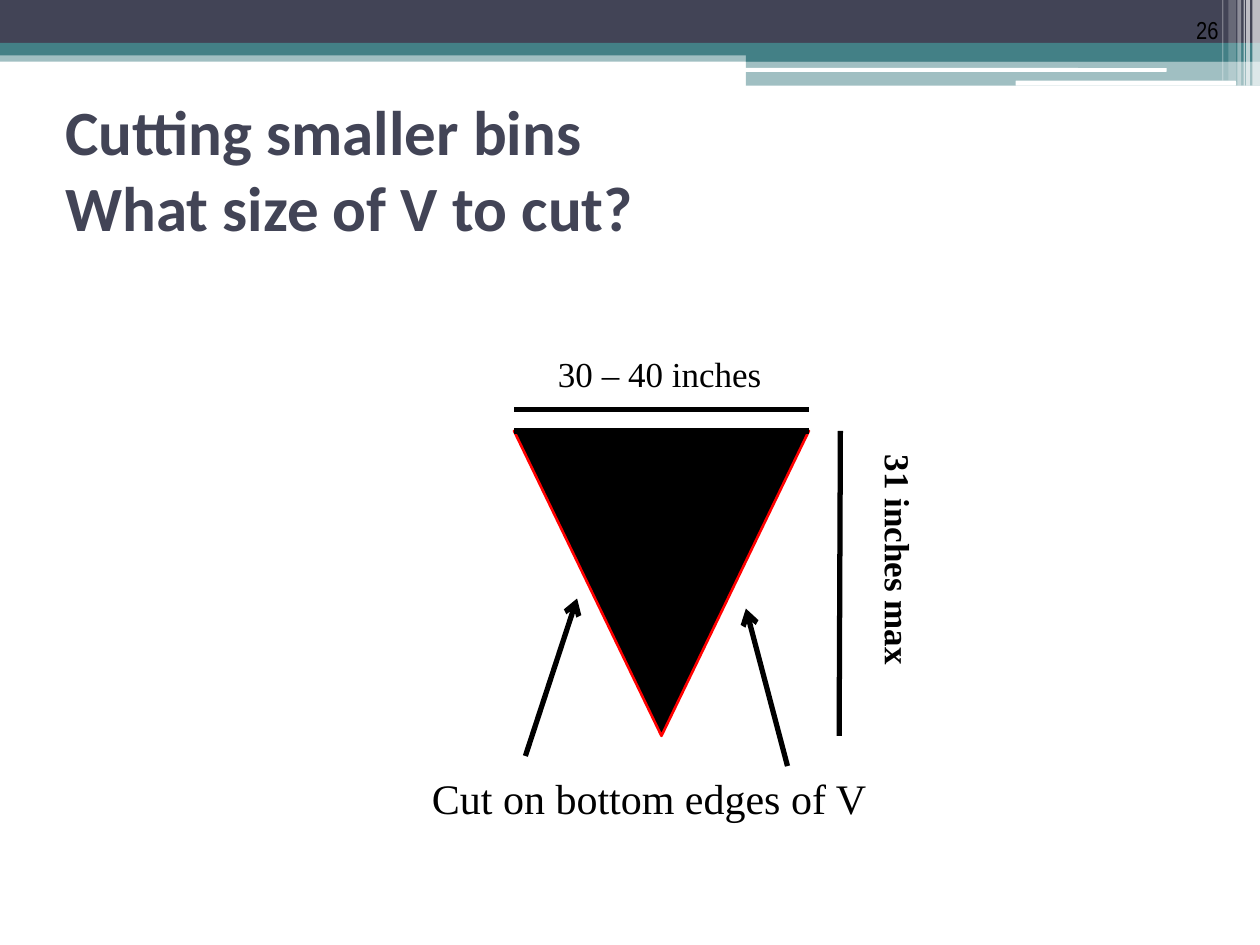
import pptx
import pptx.dml.color
import pptx.enum.shapes
import pptx.enum.text
import pptx.oxml.ns
import pptx.util
from lxml import etree

Inches = pptx.util.Inches
SHAPE = pptx.enum.shapes.MSO_SHAPE
ALIGN = pptx.enum.text.PP_ALIGN
ANCHOR = pptx.enum.text.MSO_ANCHOR
qn = pptx.oxml.ns.qn

COLORS = {
    "slate": "424456",
    "teal": "438086",
    "white": "FFFFFF",
    "black": "000000",
    "red": "FF0000",
}

TITLE = {"name": "Calibri", "size": pptx.util.Pt(36), "bold": True}
NUMBER = {"name": "Arial Narrow", "size": pptx.util.Pt(14)}
LABEL = {"name": "Times New Roman", "size": pptx.util.Pt(20)}
BOLD_LABEL = {**LABEL, "bold": True}
CAPTION = {**LABEL, "size": pptx.util.Pt(24)}

# Header bands: left, top, width, height, colour, opacity in percent
BANDS = [
    (0, 0.4, 10, 0.09, "teal", 50),
    (0, 0, 10, 0.34, "slate", 100),
    (0, 0.34, 10, 0.1, "teal", 100),
    (5.92, 0.39, 4.08, 0.1, "teal", 100),
    (5.92, 0.48, 4.08, 0.2, "teal", 50),
]
# White rounded strips: left, top, width, height
STRIPS = [(5.91, 0.54, 3.35, 0.03), (8.06, 0.64, 1.75, 0.04)]
# Pale stripes in the corner: left, width, height, opacity in percent
STRIPES = [
    (9.94, 0.06, 0.68, 65),
    (9.89, 0.03, 0.68, 65),
    (9.87, 0.01, 0.68, 60),
    (9.82, 0.03, 0.68, 40),
    (9.75, 0.06, 0.64, 20),
    (9.7, 0.01, 0.64, 30),
]


def rgb(color):
    return pptx.dml.color.RGBColor.from_string(COLORS[color])


def add_block(slide, kind, box, color, opacity=100):
    block = slide.shapes.add_shape(kind, *map(Inches, box))
    block.shadow.inherit = False
    block.fill.solid()
    block.fill.fore_color.rgb = rgb(color)
    block.line.fill.background()
    if opacity < 100:
        fill_color = block.fill._xPr.find(qn("a:solidFill"))[0]
        etree.SubElement(fill_color, qn("a:alpha"), val=str(opacity * 1000))
    return block


def add_text(slide, box, text, font_format, color="black",
             align=ALIGN.LEFT, anchor=ANCHOR.TOP, rotation=0):
    label = slide.shapes.add_textbox(*map(Inches, box))
    label.rotation = rotation
    frame = label.text_frame
    frame.word_wrap = True
    frame.vertical_anchor = anchor
    frame.text = text
    paragraph = frame.paragraphs[0]
    paragraph.alignment = align
    for attribute, value in font_format.items():
        setattr(paragraph.font, attribute, value)
    paragraph.font.color.rgb = rgb(color)


def add_line(slide, start, end, arrow=False):
    line = slide.shapes.add_connector(
        pptx.enum.shapes.MSO_CONNECTOR.STRAIGHT, *map(Inches, start + end))
    line.line.color.rgb = rgb("black")
    line.line.width = pptx.util.Pt(3)
    if arrow:
        etree.SubElement(line.line._get_or_add_ln(), qn("a:tailEnd"), type="arrow")
    etree.SubElement(line._element.spPr, qn("a:effectLst"))


def add_header(slide):
    for *box, color, opacity in BANDS:
        add_block(slide, SHAPE.RECTANGLE, box, color, opacity)
    for box in STRIPS:
        add_block(slide, SHAPE.ROUNDED_RECTANGLE, box, "white")
    for left, width, height, opacity in STRIPES:
        add_block(slide, SHAPE.RECTANGLE, (left, 0, width, height), "white", opacity)


def add_cut_diagram(slide):
    left, right, top, bottom = 4.08, 6.42, 3.42, 5.84

    # The V itself
    v_cut = add_block(slide, SHAPE.FLOWCHART_MERGE,
                      (left, top, right - left, bottom - top), "black")
    v_cut.line.color.rgb = rgb("red")
    v_cut.line.width = pptx.util.Pt(1.5)

    # Width and height measures
    add_line(slide, (left, 3.25), (right, 3.25))
    add_text(slide, (4.33, 2.75, 1.92, 0.44), "30 – 40 inches", LABEL)
    add_line(slide, (6.67, top), (6.66, bottom))
    add_text(slide, (6.17, 4.25, 1.92, 0.44), "31 inches max", BOLD_LABEL, rotation=90)
    add_line(slide, (left, top), (right, top))

    # Caption with arrows to both cut edges
    add_text(slide, (3.33, 6.08, 3.83, 0.51), "Cut on bottom edges of V", CAPTION)
    add_line(slide, (4.17, 6), (4.58, 4.75), arrow=True)
    add_line(slide, (6.25, 6.08), (5.92, 4.83), arrow=True)


def main():
    deck = pptx.Presentation()
    deck.slide_width, deck.slide_height = Inches(10), Inches(7.5)
    slide = deck.slides.add_slide(deck.slide_layouts[6])

    add_header(slide)
    add_text(slide, (0.42, 0.75, 9, 1.17),
             "Cutting smaller bins\vWhat size of V to cut?",
             TITLE, "slate", anchor=ANCHOR.MIDDLE)
    add_text(slide, (8.94, 0, 0.83, 0.4), "26", NUMBER,
             align=ALIGN.RIGHT, anchor=ANCHOR.BOTTOM)
    add_cut_diagram(slide)

    deck.save("out.pptx")


if __name__ == "__main__":
    main()
